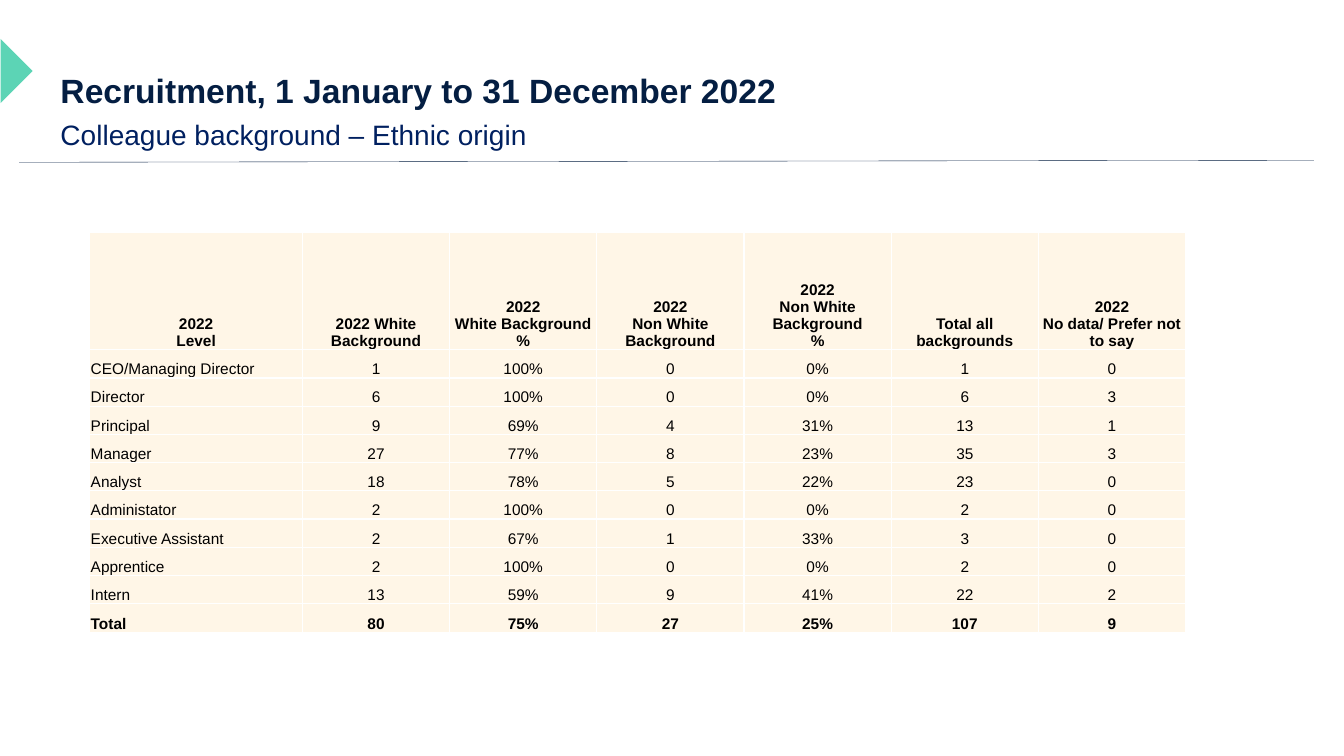
from copy import deepcopy

from lxml import etree
from pptx import Presentation
from pptx import util as u
from pptx.dml.color import RGBColor
from pptx.enum import shapes, text
from pptx.oxml import ns

TITLE = "Recruitment, 1 January to 31 December 2022"
SUB = "Colleague background – Ethnic origin"
HEAD = ("2022\nLevel", "2022 White Background", "2022\nWhite Background\n%",
        "2022\nNon White Background", "2022\nNon White Background\n%",
        "Total all backgrounds", "2022\nNo data/ Prefer not to say")
LEVELS = [
    ("CEO/Managing Director", "1", "100%", "0", "0%", "1", "0"),
    ("Director", "6", "100%", "0", "0%", "6", "3"),
    ("Principal", "9", "69%", "4", "31%", "13", "1"),
    ("Manager", "27", "77%", "8", "23%", "35", "3"),
    ("Analyst", "18", "78%", "5", "22%", "23", "0"),
    ("Administator", "2", "100%", "0", "0%", "2", "0"),
    ("Executive Assistant", "2", "67%", "1", "33%", "3", "0"),
    ("Apprentice", "2", "100%", "0", "0%", "2", "0"),
    ("Intern", "13", "59%", "9", "41%", "22", "2"),
]
TOTAL = ("Total", "80", "75%", "27", "25%", "107", "9")

NAVY, BLUE, MINT, CREAM = "041E42", "002060", "5CD4B5", "FFF6E7"
BLACK, WHITE = "000000", "FFFFFF"
LEFT, CENTER = text.PP_ALIGN.LEFT, text.PP_ALIGN.CENTER


def color(code):
    return RGBColor.from_string(code)


def box(*sizes):
    return [u.Inches(size) for size in sizes]


def write(frame, words, size, ink, bold=False, align=LEFT, space=None):
    """Fill the first paragraph; a newline becomes a line break."""
    para = frame.paragraphs[0]
    para.text = words
    para.alignment = align
    para.space_before = u.Pt(0)
    if space:
        para.line_spacing = space
    for run in para.runs:
        font = run.font
        font.name, font.size, font.bold = "Arial", u.Pt(size), bold
        font.color.rgb = color(ink)
    # A break needs the text size too, or it makes its line taller.
    for gap in para._p.findall(ns.qn("a:br")):
        gap.insert(0, deepcopy(para.runs[0]._r.rPr))
    return para


def place(holder, area, anchor):
    holder.left, holder.top, holder.width, holder.height = box(*area)
    frame = holder.text_frame
    frame.word_wrap = True
    frame.auto_size = text.MSO_AUTO_SIZE.NONE
    frame.vertical_anchor = anchor
    return frame


def edge(cell, ink, width):
    """Draw the four borders, which must come before the cell's fill."""
    props = cell._tc.get_or_add_tcPr()
    for spot, side in enumerate(("lnL", "lnR", "lnT", "lnB")):
        line = etree.Element(ns.qn("a:" + side), w=str(u.Pt(width)))
        fill = etree.SubElement(line, ns.qn("a:solidFill"))
        etree.SubElement(fill, ns.qn("a:srgbClr"), val=ink)
        props.insert(spot, line)


def add_marks(slide):
    """Add the corner arrow and the rule under the heading."""
    arrow = slide.shapes.add_shape(shapes.MSO_SHAPE.RIGHT_TRIANGLE,
                                   *box(-0.22, 0.48, 0.45, 0.45))
    arrow.rotation = 225
    arrow.shadow.inherit = False
    arrow.fill.solid()
    arrow.fill.fore_color.rgb = color(MINT)
    arrow.line.fill.background()
    rule = slide.shapes.add_connector(shapes.MSO_CONNECTOR.STRAIGHT,
                                      *box(0.19, 1.61, 13.03, 1.59))
    rule.line.color.rgb = color(NAVY)
    rule.line.width = u.Pt(0.25)
    etree.SubElement(rule._element.spPr, ns.qn("a:effectLst"))


def add_grid(slide):
    rows = [HEAD, *LEVELS, TOTAL]
    wide = [2.11] + [1.46] * (len(HEAD) - 1)
    high = [1.16] + [0.28] * len(LEVELS) + [0.29]
    area = box(0.89, 2.31, sum(wide), sum(high))
    grid = slide.shapes.add_table(len(rows), len(HEAD), *area).table
    grid.first_row = grid.horz_banding = False
    for col, size in zip(grid.columns, wide):
        col.width = u.Inches(size)
    for row, size in zip(grid.rows, high):
        row.height = u.Inches(size)
    for r, row in enumerate(rows):
        for c, words in enumerate(row):
            cell = grid.cell(r, c)
            cell.margin_left = cell.margin_right = u.Inches(0.01)
            cell.margin_top, cell.margin_bottom = box(0.01, 0)
            cell.vertical_anchor = text.MSO_ANCHOR.BOTTOM
            cell.fill.solid()
            cell.fill.fore_color.rgb = color(CREAM)
            edge(cell, WHITE, 1)
            write(cell.text_frame, words, 11, BLACK,
                  bold=row in (HEAD, TOTAL),
                  align=LEFT if r and not c else CENTER)


def main():
    deck = Presentation()
    deck.slide_width, deck.slide_height = box(13.33, 7.5)
    slide = deck.slides.add_slide(deck.slide_layouts[1])
    add_marks(slide)
    title, body = slide.placeholders
    frame = place(title, (0.5, 0.6, 9.65, 0.63), text.MSO_ANCHOR.MIDDLE)
    write(frame, TITLE, 24, NAVY, bold=True, space=0.9)
    frame = place(body, (0.5, 1.15, 8.47, 0.41), text.MSO_ANCHOR.TOP)
    props = write(frame, SUB, 20, BLUE, space=0.9)._p.get_or_add_pPr()
    props.set("marL", "0")
    props.set("indent", "0")
    etree.SubElement(props, ns.qn("a:buNone"))
    add_grid(slide)
    deck.save("out.pptx")


if __name__ == "__main__":
    main()
